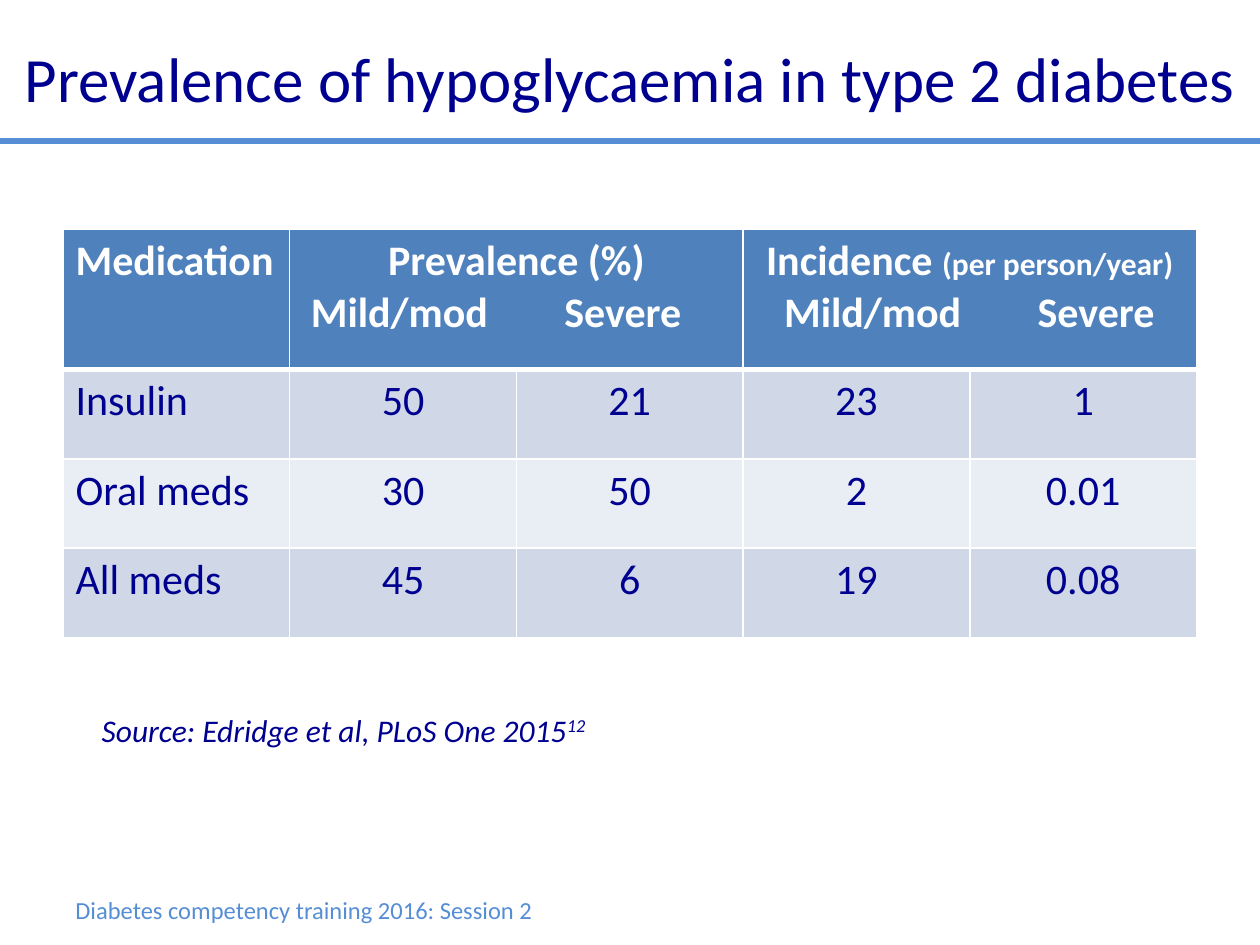
from lxml import etree
from pptx import Presentation
from pptx.dml.color import RGBColor
from pptx.enum.shapes import MSO_CONNECTOR
from pptx.enum.text import MSO_ANCHOR, PP_ALIGN
from pptx.oxml.ns import qn
from pptx.util import Cm, Pt

STRAIGHT = MSO_CONNECTOR.STRAIGHT
LEFT, CENTER = PP_ALIGN.LEFT, PP_ALIGN.CENTER
MIDDLE = MSO_ANCHOR.MIDDLE

FONT = "Calibri"
NAVY, SKY, WHITE = "000090", "558ED5", "FFFFFF"
HEADER_FILL = "4F81BD"
BAND_FILLS = ("D0D8E8", "E9EDF4")
COLUMN_WIDTH, HEADER_HEIGHT, ROW_HEIGHT = 4.57, 2.82, 1.8

SUBHEADS = "\tMild/mod\tSevere"
ROWS = (
    ("Insulin", "50", "21", "23", "1"),
    ("Oral meds", "30", "50", "2", "0.01"),
    ("All meds", "45", "6", "19", "0.08"),
)


def color(value):
    """Return the colour for a hex string."""
    return RGBColor.from_string(value)


def write(para, text, size, ink, bold=False, italic=False, align=LEFT, tabs=()):
    """Fill a paragraph, with optional centred tab stops in centimetres."""
    span = para.add_run()
    span.text = text
    para.alignment = align
    if tabs:
        tab_list = etree.SubElement(para._p.get_or_add_pPr(), qn("a:tabLst"))
        for stop in tabs:
            etree.SubElement(tab_list, qn("a:tab"), pos=str(int(Cm(stop))), algn="ctr")
    font = para.font
    font.name, font.size, font.bold, font.italic = FONT, Pt(size), bold, italic
    font.color.rgb = color(ink)


def add_text(page, left, top, width, height, text, size, ink, wrap=False, **style):
    """Add a one-paragraph text box and return its paragraph and frame."""
    box = page.shapes.add_textbox(Cm(left), Cm(top), Cm(width), Cm(height))
    frame = box.text_frame
    frame.word_wrap = wrap
    para = frame.paragraphs[0]
    write(para, text, size, ink, **style)
    return para, frame


def add_rule(page, top, width):
    """Draw the rule across the page under the title."""
    rule = page.shapes.add_connector(STRAIGHT, 0, Cm(top), width, Cm(top))
    rule.line.color.rgb = color(SKY)
    rule.line.width = Pt(3)
    etree.SubElement(rule._element.spPr, qn("a:effectLst"))


def style_cell(cell, fill, bottom=1):
    """Give a cell white borders and a solid fill."""
    properties = cell._tc.get_or_add_tcPr()
    for side, width in (("lnL", 1), ("lnR", 1), ("lnT", 1), ("lnB", bottom)):
        border = etree.SubElement(properties, qn(f"a:{side}"), w=str(int(Pt(width))))
        solid = etree.SubElement(border, qn("a:solidFill"))
        etree.SubElement(solid, qn("a:srgbClr"), val=WHITE)
    cell.fill.solid()
    cell.fill.fore_color.rgb = color(fill)


def write_heading(cell, text, note="", tabs=()):
    """Write a header cell, with subheads below when tab stops are given."""
    frame = cell.text_frame
    para = frame.paragraphs[0]
    write(para, text, 24, WHITE, bold=True, align=CENTER if tabs else LEFT)
    if note:
        span = para.add_run()
        span.text = note
        span.font.size = Pt(18)
    if tabs:
        write(frame.add_paragraph(), SUBHEADS, 24, WHITE, bold=True, tabs=tabs)


def add_results(page):
    """Add the table of prevalence and incidence by medication."""
    columns = len(ROWS[0])
    height = HEADER_HEIGHT + len(ROWS) * ROW_HEIGHT
    table = page.shapes.add_table(
        len(ROWS) + 1, columns, Cm(1.27), Cm(4.63), Cm(columns * COLUMN_WIDTH), Cm(height)
    ).table
    for column in table.columns:
        column.width = Cm(COLUMN_WIDTH)
    for index, row in enumerate(table.rows):
        row.height = Cm(ROW_HEIGHT if index else HEADER_HEIGHT)

    for column in range(columns):
        style_cell(table.cell(0, column), HEADER_FILL, bottom=3)
    for first in (1, 3):
        table.cell(0, first).merge(table.cell(0, first + 1))
    write_heading(table.cell(0, 0), "Medication")
    write_heading(table.cell(0, 1), "Prevalence (%)", tabs=(1.96, 6.46))
    write_heading(table.cell(0, 3), "Incidence ", "(per person/year)", tabs=(2.36, 6.86))

    for index, values in enumerate(ROWS):
        for column, value in enumerate(values):
            cell = table.cell(index + 1, column)
            style_cell(cell, BAND_FILLS[index % 2])
            align = CENTER if column else LEFT
            write(cell.text_frame.paragraphs[0], value, 24, NAVY, align=align)


def add_source(page):
    """Add the source line with its raised reference number."""
    text = "Source: Edridge et al, PLoS One 2015"
    para, _ = add_text(page, 1.8, 14.2, 10.49, 1.02, text, 18, NAVY, italic=True)
    reference = para.add_run()
    reference.text = "12"
    reference.font._element.set("baseline", "30000")


def main():
    """Build the slide and save the deck."""
    deck = Presentation()
    deck.slide_width, deck.slide_height = Cm(25.4), Cm(19.05)
    page = deck.slides.add_slide(deck.slide_layouts[6])
    add_rule(page, 2.84, deck.slide_width)
    footer = "Diabetes competency training 2016: Session 2"
    add_text(page, 1.27, 17.91, 9.83, 0.86, footer, 14, SKY)
    title = "Prevalence of hypoglycaemia in type 2 diabetes"
    _, frame = add_text(page, 0, 0.28, 25.4, 2.57, title, 36, NAVY, wrap=True, align=CENTER)
    frame.vertical_anchor = MIDDLE
    add_results(page)
    add_source(page)
    deck.save("out.pptx")


if __name__ == "__main__":
    main()
